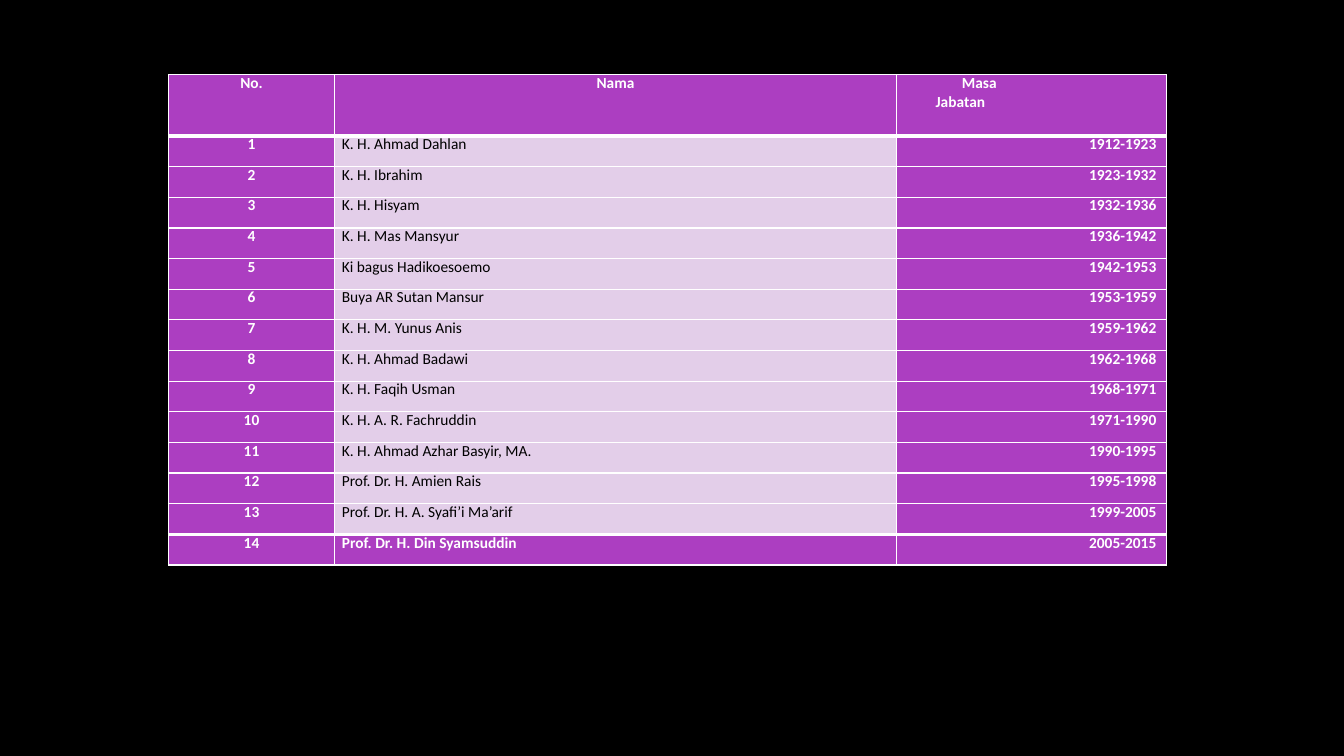
import pptx
import pptx.util
import pptx.dml.color
import pptx.enum.text
import pptx.oxml
import pptx.oxml.ns

HEAD = ("No.", "Nama", ("Masa", "Jabatan"))
CHAIRS = [
    ("K. H. Ahmad Dahlan", "1912-1923"),
    ("K. H. Ibrahim", "1923-1932"),
    ("K. H. Hisyam", "1932-1936"),
    ("K. H. Mas Mansyur", "1936-1942"),
    ("Ki bagus Hadikoesoemo", "1942-1953"),
    ("Buya AR Sutan Mansur", "1953-1959"),
    ("K. H. M. Yunus Anis", "1959-1962"),
    ("K. H. Ahmad Badawi", "1962-1968"),
    ("K. H. Faqih Usman", "1968-1971"),
    ("K. H. A. R. Fachruddin", "1971-1990"),
    ("K. H. Ahmad Azhar Basyir, MA.", "1990-1995"),
    ("Prof. Dr. H. Amien Rais", "1995-1998"),
    ("Prof. Dr. H. A. Syafi’i Ma’arif", "1999-2005"),
    ("Prof. Dr. H. Din Syamsuddin", "2005-2015"),
]
BLACK, WHITE, PURPLE, PALE = "000000", "FFFFFF", "AC3EC1", "E3CEE9"
LEFT, TOP, HIGH = 1.67, 0.74, 4.87
COLS = (1.65, 5.57, 2.68)
HEAD_H = 0.61
LAST = len(CHAIRS)
ROW_H = (HIGH - HEAD_H) / LAST
THIN, THICK = 1, 3

inch = pptx.util.Inches
point = pptx.util.Pt
ALIGN = pptx.enum.text.PP_ALIGN


def color(code):
    return pptx.dml.color.RGBColor.from_string(code)


def write(para, text, align=ALIGN.LEFT, left=0, right=0, lead=12.7,
          before=0, ink=WHITE, bold=True):
    """Fill one paragraph; left and right are its margins in inches."""
    props = para._p.get_or_add_pPr()
    props.set("marL", str(inch(left)))
    props.set("marR", str(inch(right)))
    para.alignment = align
    para.line_spacing = point(lead)
    if before:
        para.space_before = point(before)
    run = para.add_run()
    run.text = text
    run.font.name = "Calibri"
    run.font.size = point(11)
    run.font.bold = bold
    run.font.color.rgb = color(ink)


def border(cell, side, width):
    cell._tc.get_or_add_tcPr().append(pptx.oxml.parse_xml(
        f'<a:ln{side} {pptx.oxml.ns.nsdecls("a")} w="{point(width)}">'
        f'<a:solidFill><a:srgbClr val="{WHITE}"/></a:solidFill></a:ln{side}>'))


def style(cell, row, fill):
    """Set margins, borders and fill; rules by the first and last rows are thick."""
    cell.margin_left = cell.margin_right = 0
    cell.margin_top = cell.margin_bottom = 0
    border(cell, "L", THIN)
    border(cell, "R", THIN)
    border(cell, "T", THICK if row in (1, LAST) else THIN)
    border(cell, "B", THICK if row in (0, LAST - 1) else THIN)
    cell.fill.solid()
    cell.fill.fore_color.rgb = color(fill)


def fill_head(table):
    first = [table.cell(0, col) for col in range(len(COLS))]
    for cell in first:
        style(cell, 0, PURPLE)
    num, name, term = [cell.text_frame for cell in first]
    write(num.paragraphs[0], HEAD[0], ALIGN.CENTER, 0.25, 0.25, 12.8)
    write(name.paragraphs[0], HEAD[1], ALIGN.CENTER, 1.11, 1.11, 12.8)
    write(term.paragraphs[0], HEAD[2][0], left=0.65, lead=12.8)
    write(term.add_paragraph(), HEAD[2][1], left=0.39, lead=12.8, before=0.8)


def fill_row(table, row, name, term):
    final = row == LAST
    lead = 12.8 if row in (1, LAST) else 12.7
    inset = 0.25 if row > 9 else 0
    looks = [
        (str(row), PURPLE, dict(align=ALIGN.CENTER, left=inset, right=inset)),
        (name, PURPLE if final else PALE,
         dict(left=0.07, ink=WHITE if final else BLACK, bold=final)),
        (term, PURPLE, dict(align=ALIGN.RIGHT, right=0.1)),
    ]
    for col, (text, fill, look) in enumerate(looks):
        cell = table.cell(row, col)
        style(cell, row, fill)
        write(cell.text_frame.paragraphs[0], text, lead=lead, **look)


def main():
    deck = pptx.Presentation()
    deck.slide_width, deck.slide_height = inch(13.33), inch(7.5)
    slide = deck.slides.add_slide(deck.slide_layouts[6])
    slide.background.fill.solid()
    slide.background.fill.fore_color.rgb = color(BLACK)

    table = slide.shapes.add_table(
        LAST + 1, len(COLS), inch(LEFT), inch(TOP),
        inch(sum(COLS)), inch(HIGH)).table
    for col, width in zip(table.columns, COLS):
        col.width = inch(width)
    for row, line in enumerate(table.rows):
        line.height = inch(ROW_H if row else HEAD_H)

    fill_head(table)
    for row, (name, term) in enumerate(CHAIRS, 1):
        fill_row(table, row, name, term)
    deck.save("out.pptx")


if __name__ == "__main__":
    main()
